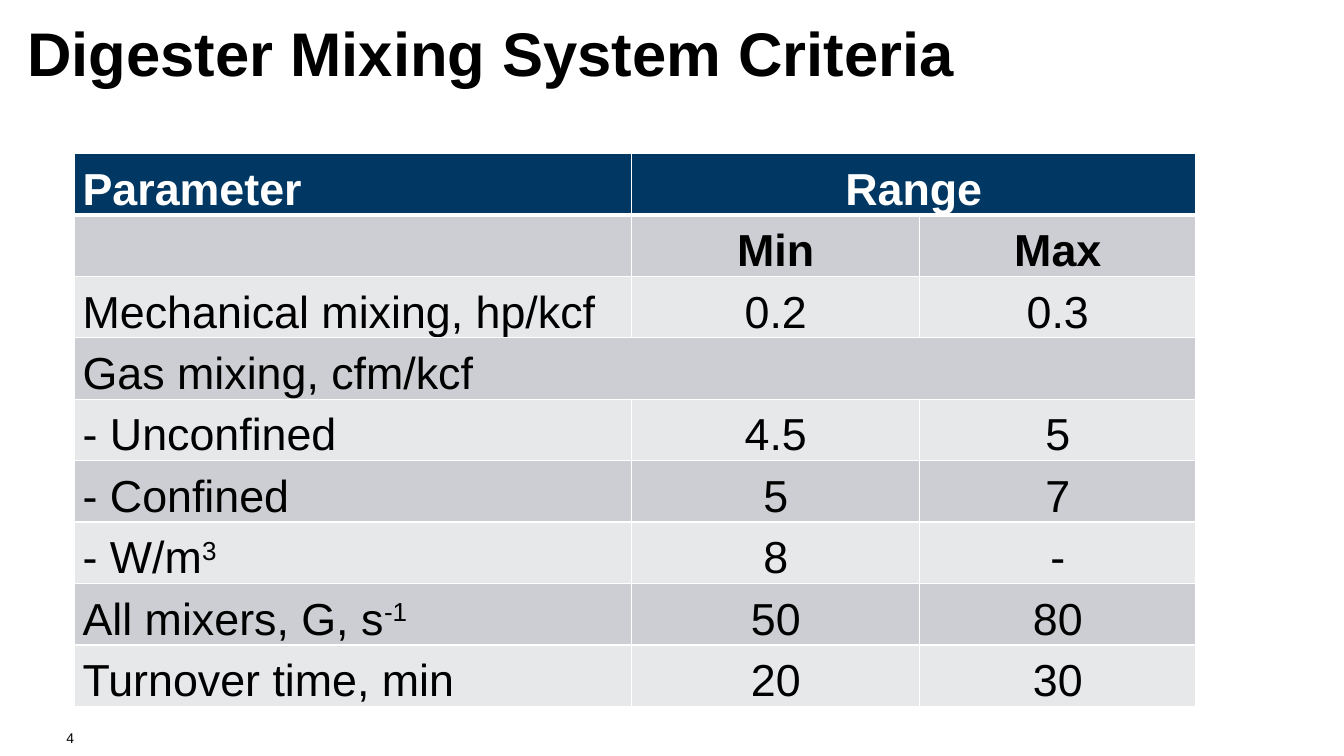
from lxml import etree
from pptx import Presentation
from pptx.dml.color import RGBColor
from pptx.enum import text
from pptx.oxml import ns
from pptx.util import Inches, Pt

TITLE = "Digester Mixing System Criteria"
PAGE_NUMBER = "4"
CRITERIA = [
    ("Parameter", "Range", None),
    ("", "Min", "Max"),
    ("Mechanical mixing, hp/kcf", "0.2", "0.3"),
    ("Gas mixing, cfm/kcf", None, None),
    ("- Unconfined", "4.5", "5"),
    ("- Confined", "5", "7"),
    ("- W/m^3", "8", "-"),
    ("All mixers, G, s^-1", "50", "80"),
    ("Turnover time, min", "20", "30"),
]
HEADING_ROWS = 2
COLUMN_WIDTHS = (5.53, 2.86, 2.74)
ROW_HEIGHT = 0.61

BLACK = RGBColor(0x00, 0x00, 0x00)
WHITE = RGBColor(0xFF, 0xFF, 0xFF)
NAVY = RGBColor(0x00, 0x37, 0x63)
BANDS = (RGBColor(0xE7, 0xE8, 0xEA), RGBColor(0xCC, 0xCE, 0xD3))


def apply(target, **values):
    for name, value in values.items():
        setattr(target, name, value)


def add_span(para, words, size, color=BLACK, bold=False):
    span = para.add_run()
    span.text = words
    apply(span.font, name="Arial", size=Pt(size), bold=bold)
    span.font.color.rgb = color
    return span


def set_borders(cell, **widths):
    properties = cell._tc.get_or_add_tcPr()
    for side in "LRTB":
        line = etree.SubElement(properties, ns.qn("a:ln" + side), w=str(Pt(widths.get(side, 1))))
        fill = etree.SubElement(line, ns.qn("a:solidFill"))
        etree.SubElement(fill, ns.qn("a:srgbClr"), val=str(WHITE))


def fill_cell(cell, words, row, column):
    set_borders(cell, **{0: {"B": 3}, 1: {"T": 3}}.get(row, {}))
    cell.fill.solid()
    cell.fill.fore_color.rgb = NAVY if row == 0 else BANDS[row % 2]
    apply(cell, margin_left=Inches(0.08), margin_right=Inches(0.08),
          margin_top=0, margin_bottom=0, vertical_anchor=text.MSO_ANCHOR.BOTTOM)
    if not words:
        return
    para = cell.text_frame.paragraphs[0]
    merged_heading = row == 0 and column > 0
    apply(para, alignment=text.PP_ALIGN.CENTER if column else text.PP_ALIGN.LEFT,
          line_spacing=1.0 if merged_heading else 1.07,
          space_after=Pt(3 if merged_heading else 0))
    base, *raised = words.split("^")
    style = {"size": 32, "color": BLACK if row else WHITE, "bold": row < HEADING_ROWS}
    add_span(para, base, **style)
    for exponent in raised:
        add_span(para, exponent, **style)._r.get_or_add_rPr().set("baseline", "30000")


def add_title(page):
    title = page.shapes.title
    apply(title, left=Inches(0.27), top=Inches(0.23), width=Inches(12.8), height=Inches(0.67))
    apply(title.text_frame, margin_left=0, margin_right=0, margin_top=0, margin_bottom=0,
          word_wrap=True, vertical_anchor=text.MSO_ANCHOR.TOP,
          auto_size=text.MSO_AUTO_SIZE.SHAPE_TO_FIT_TEXT)
    para = title.text_frame.paragraphs[0]
    apply(para, alignment=text.PP_ALIGN.LEFT, line_spacing=0.9,
          space_before=Pt(0), space_after=Pt(6))
    add_span(para, TITLE, 44, bold=True)


def add_criteria(page):
    table = page.shapes.add_table(
        len(CRITERIA), len(COLUMN_WIDTHS), Inches(0.74), Inches(1.52),
        Inches(sum(COLUMN_WIDTHS)), Inches(ROW_HEIGHT * len(CRITERIA))).table
    for column, width in zip(table.columns, COLUMN_WIDTHS):
        column.width = Inches(width)
    for row, entries in enumerate(CRITERIA):
        table.rows[row].height = Inches(ROW_HEIGHT)
        for column, words in enumerate(entries):
            fill_cell(table.cell(row, column), words, row, column)
        if None in entries:
            table.cell(row, entries.index(None) - 1).merge(table.cell(row, len(entries) - 1))


def add_page_number(page):
    box = page.shapes.add_textbox(Inches(0.56), Inches(7.18), Inches(0.86), Inches(0.28))
    apply(box.text_frame, word_wrap=True, vertical_anchor=text.MSO_ANCHOR.MIDDLE)
    para = box.text_frame.paragraphs[0]
    para.space_after = Pt(3)
    add_span(para, PAGE_NUMBER, 10)


def main():
    deck = Presentation()
    apply(deck, slide_width=Inches(13.34), slide_height=Inches(7.5))
    page = deck.slides.add_slide(deck.slide_layouts.get_by_name("Title Only"))
    add_title(page)
    add_criteria(page)
    add_page_number(page)
    deck.save("out.pptx")


if __name__ == "__main__":
    main()
